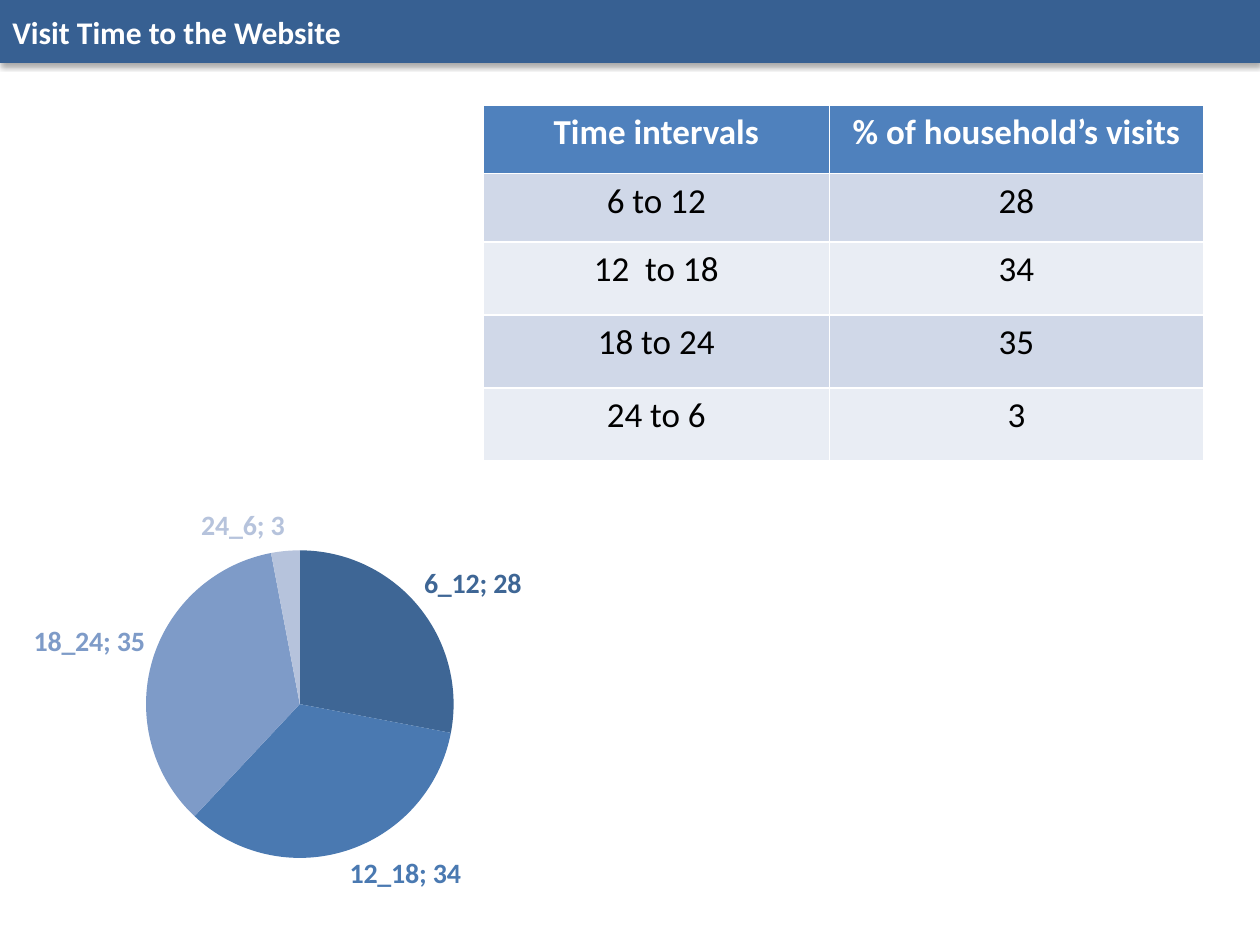
from pptx import Presentation
from pptx.chart.data import CategoryChartData
from pptx.dml.color import RGBColor
from pptx.enum.chart import XL_CHART_TYPE, XL_LABEL_POSITION
from pptx.enum.shapes import MSO_SHAPE
from pptx.enum.text import MSO_ANCHOR, PP_ALIGN
from pptx.oxml import parse_xml
from pptx.oxml.ns import nsdecls, qn
from pptx.util import Cm, Pt

PIE = XL_CHART_TYPE.PIE
OUTER = XL_LABEL_POSITION.OUTSIDE_END
RECT = MSO_SHAPE.RECTANGLE
MIDDLE = MSO_ANCHOR.MIDDLE
LEFT, CENTER = PP_ALIGN.LEFT, PP_ALIGN.CENTER

WHITE = RGBColor(0xFF, 0xFF, 0xFF)
BLACK = RGBColor(0x00, 0x00, 0x00)
NAVY = RGBColor(0x37, 0x60, 0x92)
BLUE = RGBColor(0x4F, 0x81, 0xBD)
BANDS = (RGBColor(0xD0, 0xD8, 0xE8), RGBColor(0xE9, 0xED, 0xF4))
SLICES = (
    RGBColor(0x3E, 0x66, 0x95),
    RGBColor(0x4A, 0x79, 0xB1),
    RGBColor(0x7E, 0x9B, 0xC8),
    RGBColor(0xB6, 0xC3, 0xDC),
)

SHADOW = (
    f'<a:outerShdw {nsdecls("a")} blurRad="{Pt(3.1)}" dist="{Pt(1.8)}" dir="5400000" '
    'rotWithShape="0"><a:srgbClr val="000000"><a:alpha val="35000"/></a:srgbClr></a:outerShdw>'
)
LAYOUT = (
    f'<c:layout {nsdecls("c")}><c:manualLayout><c:layoutTarget val="inner"/>'
    '<c:xMode val="edge"/><c:yMode val="edge"/><c:x val="0.26"/><c:y val="0.13"/>'
    '<c:w val="0.55"/><c:h val="0.68"/></c:manualLayout></c:layout>'
)
BREAK = f'<c:separator {nsdecls("c")}>; </c:separator>'


class Deck:
    """Holds the style and the current slide, and draws each kind of element."""

    face = "Calibri"

    def __init__(self, show):
        self.slide = show.slides.add_slide(show.slide_layouts[6])

    def style(self, font, size, color, bold):
        font.name, font.size, font.bold = self.face, Pt(size), bold
        font.color.rgb = color

    def label(self, frame, text, size, color, bold, align):
        line = frame.paragraphs[0]
        line.text, line.alignment = text, align
        self.style(line.font, size, color, bold)

    def banner(self, text, width, height):
        bar = self.slide.shapes.add_shape(RECT, 0, 0, Cm(width), Cm(height))
        bar.fill.solid()
        bar.fill.fore_color.rgb = NAVY
        bar.line.fill.background()
        bar.shadow.inherit = False
        bar.element.spPr.find(qn("a:effectLst")).append(parse_xml(SHADOW))
        bar.text_frame.vertical_anchor = MIDDLE
        self.label(bar.text_frame, text, 18, WHITE, True, LEFT)

    def table(self, rows, left, top, widths, heights):
        table = self.slide.shapes.add_table(
            len(rows), len(widths), Cm(left), Cm(top), Cm(sum(widths)), Cm(sum(heights))
        ).table
        for column, width in zip(table.columns, widths):
            column.width = Cm(width)
        for i, (row, height) in enumerate(zip(rows, heights)):
            table.rows[i].height = Cm(height)
            head = i == 0
            for j, text in enumerate(row):
                cell = table.cell(i, j)
                cell.fill.solid()
                cell.fill.fore_color.rgb = BLUE if head else BANDS[(i - 1) % 2]
                self.label(cell.text_frame, text, 20, WHITE if head else BLACK, head, CENTER)

    def pie(self, names, values, left, top, width, height):
        data = CategoryChartData()
        data.categories = names
        data.add_series("Series 1", values)
        chart = self.slide.shapes.add_chart(
            PIE, Cm(left), Cm(top), Cm(width), Cm(height), data
        ).chart
        chart.has_legend = chart.has_title = False
        self.style(chart.font, 16, BLACK, True)
        plot = chart.plots[0]
        plot.vary_by_categories = False
        series = plot.series[0]
        labels = series.data_labels
        labels.show_value = labels.show_category_name = True
        labels.position = OUTER
        for i, color in enumerate(SLICES):
            point = series.points[i]
            point.format.fill.solid()
            point.format.fill.fore_color.rgb = color
            self.style(point.data_label.font, 16, color, True)
            point.data_label.position = OUTER
        for flag in chart.element.iter(qn("c:showCatName")):
            flag.set("val", "1")
        for flag in list(chart.element.iter(qn("c:showBubbleSize"))):
            flag.addnext(parse_xml(BREAK))
        area = chart.element.find(".//" + qn("c:plotArea"))
        for old in area.findall(qn("c:layout")):
            area.remove(old)
        area.insert(0, parse_xml(LAYOUT))


def main():
    show = Presentation()
    show.slide_width, show.slide_height = Cm(25.4), Cm(19.05)
    deck = Deck(show)
    deck.banner("Visit Time to the Website", 25.4, 1.27)
    values = (28, 34, 35, 3)
    spans = ("6 to 12", "12  to 18", "18 to 24", "24 to 6")
    rows = [("Time intervals", "% of household’s visits")]
    rows += [(span, str(value)) for span, value in zip(spans, values)]
    deck.table(rows, 9.74, 2.12, (6.98, 7.54), (1.38, 1.38, 1.47, 1.47, 1.47))
    deck.pie(("6_12", "12_18", "18_24", "24_6"), values, 0, 9.91, 11.3, 9.12)
    show.save("out.pptx")


if __name__ == "__main__":
    main()
